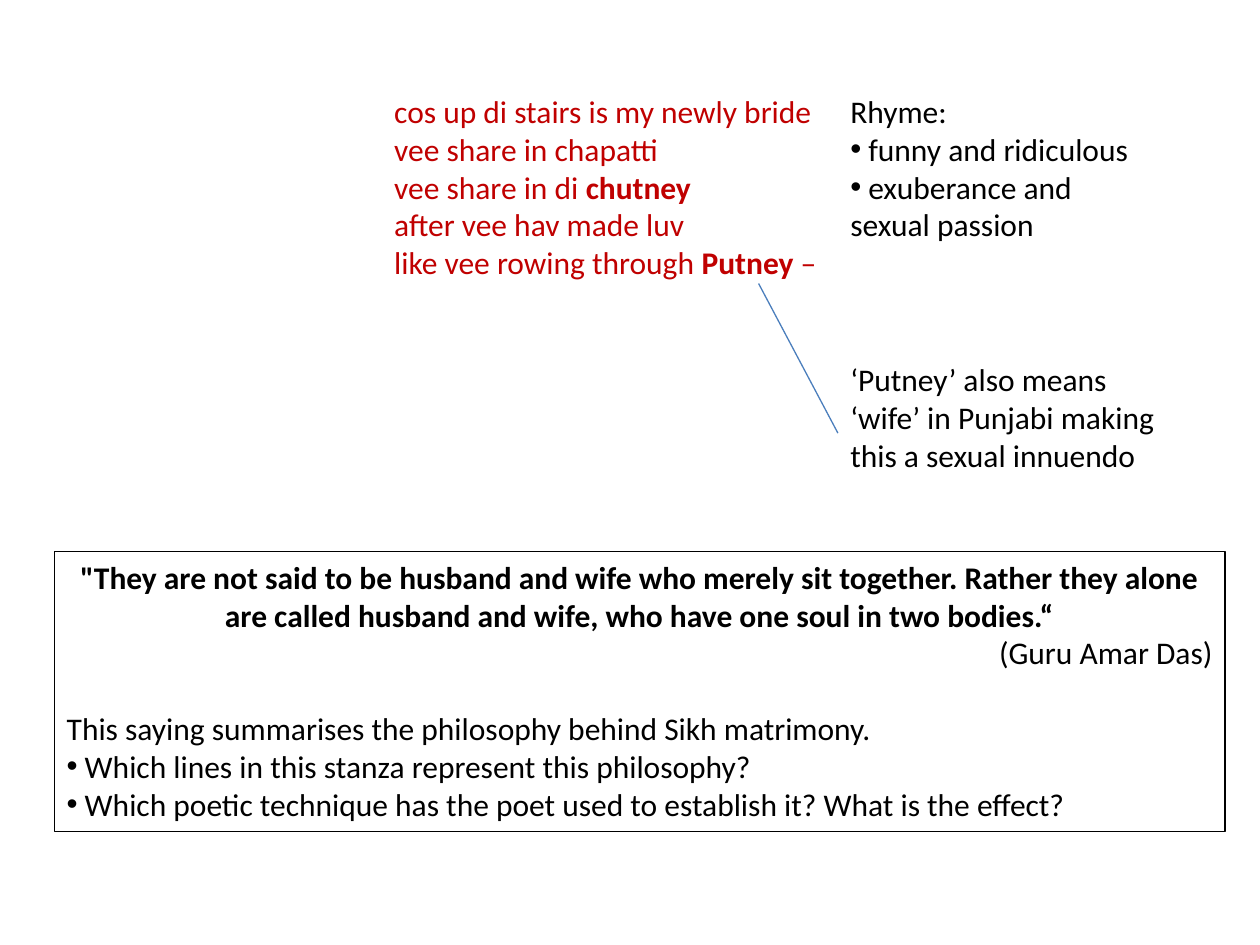
from lxml.etree import SubElement
from pptx import Presentation
from pptx.dml.color import RGBColor
from pptx.enum.shapes import MSO_CONNECTOR, MSO_SHAPE
from pptx.enum.text import MSO_ANCHOR, MSO_AUTO_SIZE, PP_ALIGN
from pptx.oxml.ns import qn
from pptx.util import Pt

COLORS = {"text": "000000", "poem": "C00000", "pointer": "4B7EBC"}


class SlideBuilder:
    font = "Calibri"
    size = 18
    line_width = 0.75

    def __init__(self, slide):
        self.slide = slide

    def fill_text(self, shape, paragraphs, color="text", wrap=True):
        """Fill a shape; each paragraph is (runs, options), each run (words, bold)."""
        frame = shape.text_frame
        frame.word_wrap = wrap
        frame.auto_size = MSO_AUTO_SIZE.SHAPE_TO_FIT_TEXT
        frame.vertical_anchor = MSO_ANCHOR.TOP
        for index, (runs, options) in enumerate(paragraphs):
            paragraph = frame.add_paragraph() if index else frame.paragraphs[0]
            paragraph.alignment = options.get("align", PP_ALIGN.LEFT)
            paragraph.space_before = Pt(options.get("before", 0))
            if options.get("bullet"):
                properties = paragraph._p.get_or_add_pPr()
                SubElement(properties, qn("a:buFont"), typeface="Arial")
                SubElement(properties, qn("a:buChar"), char="•")
            for words, bold in runs:
                run = paragraph.add_run()
                run.text = words
                run.font.name = self.font
                run.font.size = Pt(self.size)
                run.font.bold = bold
                run.font.color.rgb = RGBColor.from_string(COLORS[color])

    def text(self, left, top, width, height, paragraphs, **style):
        box = self.slide.shapes.add_textbox(Pt(left), Pt(top), Pt(width), Pt(height))
        self.fill_text(box, paragraphs, **style)

    def framed_text(self, left, top, width, height, paragraphs):
        frame = self.slide.shapes.add_shape(
            MSO_SHAPE.RECTANGLE, Pt(left), Pt(top), Pt(width), Pt(height))
        frame.shadow.inherit = False
        frame.fill.background()
        frame.line.color.rgb = RGBColor.from_string(COLORS["text"])
        frame.line.width = Pt(self.line_width)
        self.fill_text(frame, paragraphs)

    def line(self, x1, y1, x2, y2):
        pointer = self.slide.shapes.add_connector(
            MSO_CONNECTOR.STRAIGHT, Pt(x1), Pt(y1), Pt(x2), Pt(y2))
        pointer.line.color.rgb = RGBColor.from_string(COLORS["pointer"])
        pointer.line.width = Pt(self.line_width)
        SubElement(pointer._element.spPr, qn("a:effectLst"))


def para(*runs, **options):
    """Plain strings become regular runs; (words, True) pairs are bold."""
    return [(run, False) if isinstance(run, str) else run for run in runs], options


def main():
    presentation = Presentation()
    presentation.slide_width, presentation.slide_height = Pt(720), Pt(540)
    blank_layout = presentation.slide_layouts[6]
    builder = SlideBuilder(presentation.slides.add_slide(blank_layout))
    top, notes_left = 49, 478.8

    builder.text(218.2, top, 257, 138.2, [
        para("cos up di stairs is my newly bride"),
        para("vee share in chapatti"),
        para("vee share in di ", ("chutney", True)),
        para("after vee hav made luv"),
        para("like vee rowing through ", ("Putney", True), " –"),
    ], color="poem", wrap=False)
    builder.text(notes_left, top, 175.7, 96.5, [
        para("Rhyme:"),
        para(" funny and ridiculous", bullet=True),
        para(" exuberance and sexual passion", bullet=True),
    ])
    builder.line(433.5, 162, notes_left, 247.5)
    builder.text(notes_left, 202.3, 203.8, 72.7, [
        para("‘Putney’ also means ‘wife’ in Punjabi making this a sexual innuendo"),
    ])
    builder.framed_text(31, 315.2, 669, 160, [
        para(("\"They are not said to be husband and wife who merely sit together. "
              "Rather they alone are called husband and wife, "
              "who have one soul in two bodies.“", True), align=PP_ALIGN.CENTER),
        para("(Guru Amar Das)", align=PP_ALIGN.RIGHT),
        para("This saying summarises the philosophy behind Sikh matrimony.", before=21.6),
        para(" Which lines in this stanza represent this philosophy?", bullet=True),
        para(" Which poetic technique has the poet used to establish it? "
             "What is the effect?", bullet=True),
    ])
    presentation.save("out.pptx")


if __name__ == "__main__":
    main()
